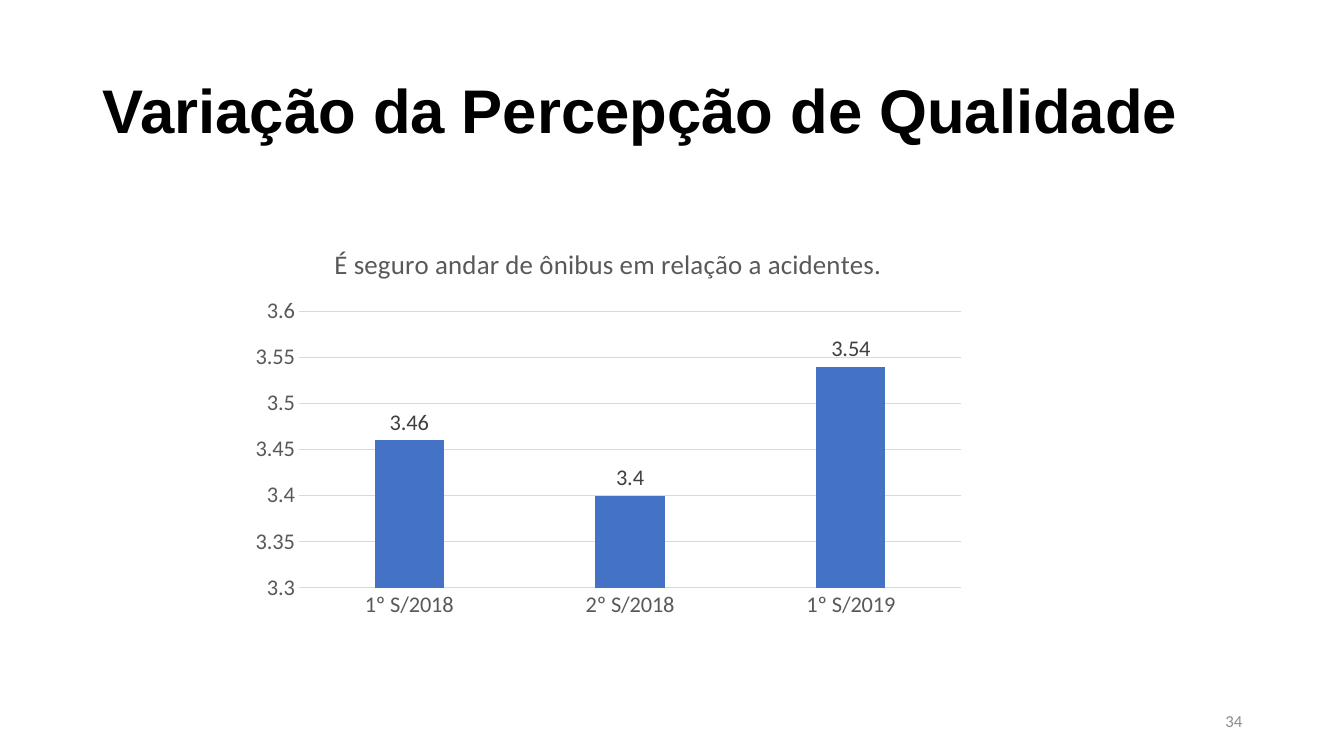
from pptx import Presentation
from pptx.chart.data import CategoryChartData
from pptx.dml.color import RGBColor
from pptx.enum.chart import XL_CHART_TYPE, XL_LABEL_POSITION, XL_TICK_MARK
from pptx.enum.text import MSO_ANCHOR, PP_ALIGN
from pptx.util import Inches, Pt

COLUMNS = XL_CHART_TYPE.COLUMN_CLUSTERED
OUTSIDE_END = XL_LABEL_POSITION.OUTSIDE_END
NO_TICK = XL_TICK_MARK.NONE
MIDDLE = MSO_ANCHOR.MIDDLE
LEFT, RIGHT = PP_ALIGN.LEFT, PP_ALIGN.RIGHT
QUESTION = "É seguro andar de ônibus em relação a acidentes."


def set_font(font, size, color, name="Calibri", bold=False):
    font.name = name
    font.size = Pt(size)
    font.bold = bold
    font.color.rgb = RGBColor.from_string(color)


def add_text(page, text, left, top, width, height, align):
    box = page.shapes.add_textbox(Inches(left), Inches(top), Inches(width), Inches(height))
    box.text_frame.word_wrap = True
    box.text_frame.vertical_anchor = MIDDLE
    para = box.text_frame.paragraphs[0]
    para.text = text
    para.alignment = align
    return para


deck = Presentation()
deck.slide_width = Inches(13.33)
deck.slide_height = Inches(7.5)
page = deck.slides.add_slide(deck.slide_layouts[6])

title = add_text(page, "Variação da Percepção de Qualidade", 0.92, 0.4, 11.5, 1.45, LEFT)
title.line_spacing = 0.9
set_font(title.font, 44, "000000", "Arial", True)

page_number = add_text(page, "34", 9.42, 6.95, 3, 0.4, RIGHT)
set_font(page_number.font, 12, "8C8C8C")

ratings = CategoryChartData()
ratings.categories = ["1º S/2018", "2º S/2018", "1º S/2019"]
ratings.add_series(QUESTION, [3.46, 3.4, 3.54])
chart = page.shapes.add_chart(
    COLUMNS, Inches(2.39), Inches(2.25), Inches(7.29), Inches(3.97), ratings
).chart
set_font(chart.font, 16, "000000")
chart.has_legend = False
chart.has_title = True
chart_title = chart.chart_title.text_frame.paragraphs[0]
chart_title.text = QUESTION
set_font(chart_title.font, 19.2, "595959")
chart.chart_title.include_in_layout = False

for axis in (chart.category_axis, chart.value_axis):
    axis.major_tick_mark = NO_TICK
    axis.minor_tick_mark = NO_TICK
    set_font(axis.tick_labels.font, 16, "595959")

value_axis = chart.value_axis
value_axis.minimum_scale = 3.3
value_axis.maximum_scale = 3.6
value_axis.major_unit = 0.05
value_axis.format.line.fill.background()
for line in (chart.category_axis.format.line, value_axis.major_gridlines.format.line):
    line.width = Pt(0.75)
    line.color.rgb = RGBColor.from_string("D9D9D9")

plot = chart.plots[0]
plot.gap_width = 219
plot.overlap = -27
plot.vary_by_categories = False
bars = plot.series[0]
bars.format.fill.solid()
bars.format.fill.fore_color.rgb = RGBColor.from_string("4472C4")
labels = bars.data_labels
labels.show_value = True
labels.position = OUTSIDE_END
set_font(labels.font, 16, "404040")

deck.save("out.pptx")
